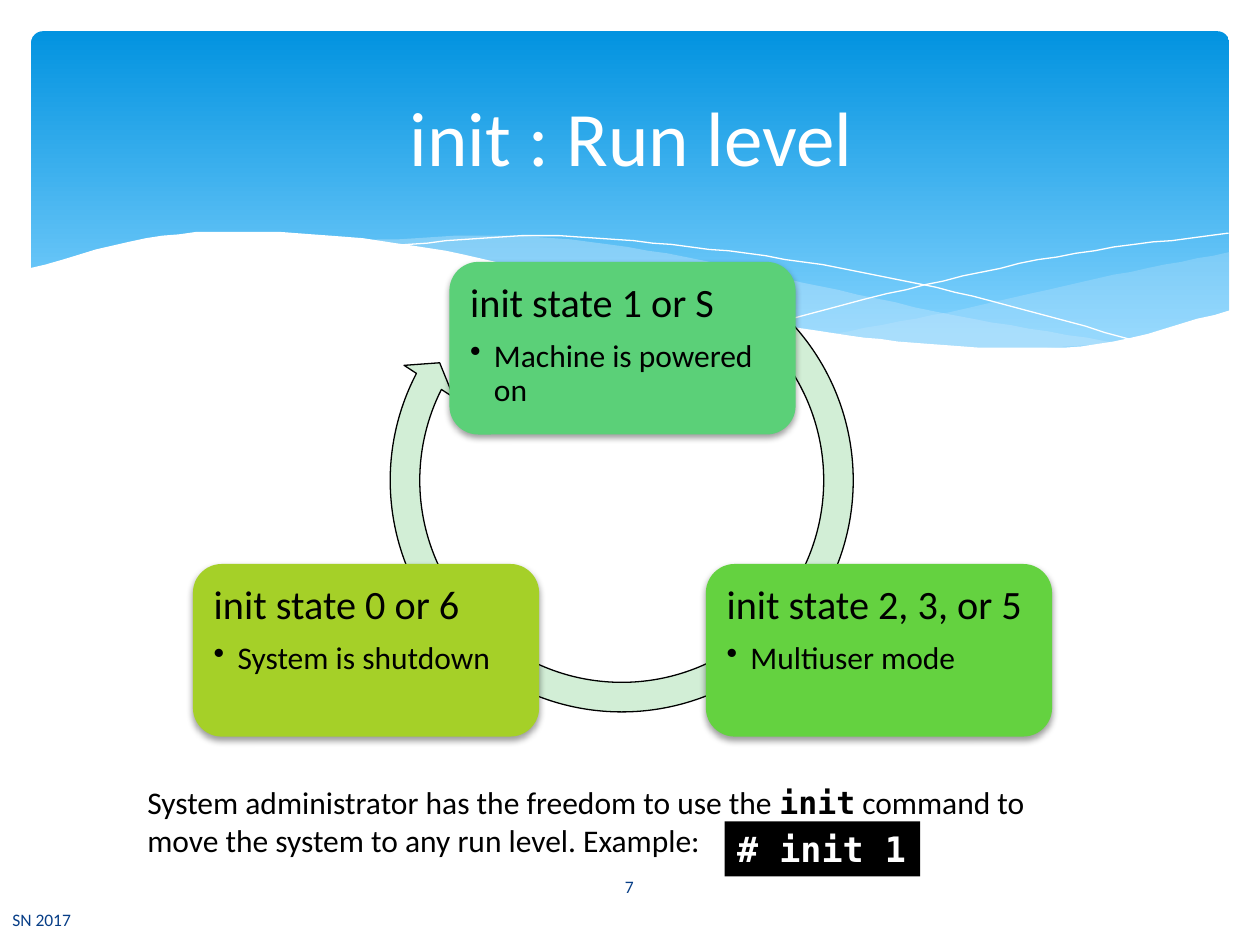
from dataclasses import dataclass
from typing import Any

from lxml.etree import SubElement
from pptx import Presentation
from pptx.dml.color import RGBColor
from pptx.enum.shapes import MSO_SHAPE
from pptx.enum.text import MSO_ANCHOR, MSO_AUTO_SIZE, PP_ALIGN
from pptx.oxml.ns import qn
from pptx.util import Cm, Pt

SANS, MONO = "Calibri", "DejaVu Sans Mono"
BLACK, WHITE, NAVY, PALE_BLUE = "000000", "FFFFFF", "073E87", "C6E7FC"
CURVE_UNIT = Cm(0.0254)
CURVE_STEPS = 8
WAVE_FLOOR = 329
BOX_WIDTH, BOX_HEIGHT = 6.98, 3.48
CYCLE_CENTER, CYCLE_SPREAD = 12.55, 5.17
UPPER_ROW, LOWER_ROW = 5.28, 11.37

Point = tuple[float, float]


@dataclass
class Span:
    text: str
    size: float
    color: str = BLACK
    font: str = SANS
    bold: bool = False


@dataclass
class State:
    heading: str
    detail: str
    column: int
    top: float
    color: str


@dataclass
class Edge:
    """A smooth curve through heights spaced evenly from start to end."""
    start: float
    end: float
    heights: list[float]

    def points(self) -> list[Point]:
        heights = self.heights
        before = 2 * heights[0] - heights[1]
        after = 2 * heights[-1] - heights[-2]
        padded = [before, *heights, after]
        count = len(heights) - 1
        width = (self.end - self.start) / count
        result: list[Point] = [(self.start, heights[0])]
        for index in range(count):
            a, b, c, d = padded[index:index + 4]
            for step in range(1, CURVE_STEPS + 1):
                t = step / CURVE_STEPS
                bend = (2 * a - 5 * b + 4 * c - d) * t + (3 * b - a - 3 * c + d) * t * t
                result.append((self.start + (index + t) * width,
                               b + t * (c - a + bend) / 2))
        return result


STATES = [
    State("init state 1 or S", "Machine is powered on", 0, UPPER_ROW, "5BD078"),
    State("init state 2, 3, or 5", "Multiuser mode", 1, LOWER_ROW, "64D240"),
    State("init state 0 or 6", "System is shutdown", -1, LOWER_ROW, "A5D028"),
]
RIGHT_WAVE = [Edge(976, 661, [200, 221, 245, 265]),
              Edge(661, 976, [265, 276, 274, 247])]
MIDDLE_WAVE = [Edge(893, 286, [273, 253, 227, 201, 187, 191]),
               Edge(286, 893, [191, 212, 240, 264, 277, 273])]
THIN_LINES = [Edge(309, 907, [195, 187, 196, 213, 239, 272]),
              Edge(613, 975, [257, 226, 201, 185])]
WHITE_WAVE = Edge(977, 23, [246, 273, 275, 264, 245, 220, 197, 185, 187, 213])


def rgb(color: str) -> RGBColor:
    return RGBColor.from_string(color)


def paint(shape: Any, color: str) -> None:
    """Fill a shape plainly, without outline or shadow."""
    shape.shadow.inherit = False
    shape.fill.solid()
    shape.fill.fore_color.rgb = rgb(color)
    shape.line.fill.background()


def write(para: Any, spans: list[Span], **layout: Any) -> None:
    for name, value in ({"alignment": PP_ALIGN.LEFT} | layout).items():
        setattr(para, name, value)
    for span in spans:
        run = para.add_run()
        run.text = span.text
        run.font.color.rgb = rgb(span.color)
        font_format = {"name": span.font, "size": Pt(span.size), "bold": span.bold}
        for name, value in font_format.items():
            setattr(run.font, name, value)


def add_text(page: Any, area: tuple[float, float, float, float], spans: list[Span],
             anchor: MSO_ANCHOR = MSO_ANCHOR.MIDDLE,
             alignment: PP_ALIGN = PP_ALIGN.LEFT) -> None:
    frame = page.shapes.add_textbox(*map(Cm, area)).text_frame
    frame.word_wrap = True
    frame.vertical_anchor = anchor
    write(frame.paragraphs[0], spans, alignment=alignment)


def add_banner(page: Any) -> None:
    banner = page.shapes.add_shape(MSO_SHAPE.ROUNDED_RECTANGLE,
                                   Cm(0.63), Cm(0.63), Cm(24.15), Cm(6.86))
    banner.adjustments[0] = 0.034
    banner.shadow.inherit = False
    banner.line.fill.background()
    banner.fill.gradient()
    banner.fill.gradient_angle = 270
    stops = [(0, "0293E0"), (0.9, "83D3FE")]
    for stop, (position, color) in zip(banner.fill.gradient_stops, stops):
        stop.position = position
        stop.color.rgb = rgb(color)


def add_curve(page: Any, points: list[Point], close: bool) -> Any:
    builder = page.shapes.build_freeform(*points[0], scale=CURVE_UNIT)
    builder.add_line_segments(points[1:], close=close)
    return builder.convert_to_shape()


def add_wave(page: Any, points: list[Point], color: str, opacity: int = 100) -> None:
    wave = add_curve(page, points, close=True)
    paint(wave, color)
    if opacity < 100:
        fill_color = wave._element.spPr.find(qn("a:solidFill"))[0]
        SubElement(fill_color, qn("a:alpha"), val=str(opacity * 1000))


def add_thin_line(page: Any, edge: Edge) -> None:
    line = add_curve(page, edge.points(), close=False)
    line.shadow.inherit = False
    line.fill.background()
    line.line.color.rgb = rgb(WHITE)
    line.line.width = Pt(0)


def add_waves(page: Any) -> None:
    for (top, bottom), opacity in ((RIGHT_WAVE, 29), (MIDDLE_WAVE, 40)):
        add_wave(page, top.points() + bottom.points(), PALE_BLUE, opacity)
    for edge in THIN_LINES:
        add_thin_line(page, edge)
    floor = [(WHITE_WAVE.end, WAVE_FLOOR), (WHITE_WAVE.start, WAVE_FLOOR)]
    add_wave(page, WHITE_WAVE.points() + floor, WHITE)


def add_cycle_arrow(page: Any) -> None:
    arrow = page.shapes.add_shape(MSO_SHAPE.CIRCULAR_ARROW,
                                  Cm(7.57), Cm(4.72), Cm(9.93), Cm(9.93))
    for index, value in enumerate([0.06, 3.41, 124.3, 182.64, 0.06]):
        arrow.adjustments[index] = value
    paint(arrow, "D2EED6")
    arrow.line.color.rgb = rgb(BLACK)
    arrow.line.width = Pt(0.75)


def add_soft_shadow(shape: Any) -> None:
    effects = shape._element.spPr.find(qn("a:effectLst"))
    shadow = SubElement(effects, qn("a:outerShdw"), blurRad=str(Pt(4)),
                        dist=str(Pt(2)), dir="5400000", rotWithShape="0")
    color = SubElement(shadow, qn("a:srgbClr"), val=BLACK)
    SubElement(color, qn("a:alpha"), val="38000")


def add_state(page: Any, state: State) -> None:
    left = CYCLE_CENTER + state.column * CYCLE_SPREAD - BOX_WIDTH / 2
    box = page.shapes.add_shape(MSO_SHAPE.ROUNDED_RECTANGLE, Cm(left), Cm(state.top),
                                Cm(BOX_WIDTH), Cm(BOX_HEIGHT))
    paint(box, state.color)
    add_soft_shadow(box)
    frame = box.text_frame
    frame.word_wrap = True
    frame.vertical_anchor = MSO_ANCHOR.TOP
    for side in ("left", "top", "right", "bottom"):
        setattr(frame, f"margin_{side}", Cm(0.25))
    write(frame.paragraphs[0], [Span(state.heading, 23)],
          line_spacing=0.9, space_after=Pt(8))
    detail = frame.add_paragraph()
    write(detail, [Span(state.detail, 18)],
          level=1, line_spacing=0.9, space_after=Pt(2.7))
    properties = detail._p.get_or_add_pPr()
    properties.set("marL", str(Cm(0.48)))
    properties.set("indent", str(-Cm(0.48)))
    SubElement(properties, qn("a:buChar"), char="•")


def add_command(page: Any) -> None:
    command = page.shapes.add_shape(MSO_SHAPE.RECTANGLE,
                                    Cm(14.61), Cm(16.56), Cm(3.94), Cm(1.11))
    paint(command, BLACK)
    frame = command.text_frame
    frame.word_wrap = False
    frame.auto_size = MSO_AUTO_SIZE.SHAPE_TO_FIT_TEXT
    frame.vertical_anchor = MSO_ANCHOR.TOP
    write(frame.paragraphs[0], [Span("# init 1", 20, WHITE, MONO, True)])


def main() -> None:
    deck = Presentation()
    deck.slide_width, deck.slide_height = Cm(25.4), Cm(19.05)
    page = deck.slides.add_slide(deck.slide_layouts[6])
    add_banner(page)
    add_waves(page)
    add_cycle_arrow(page)
    for state in STATES:
        add_state(page, state)
    add_text(page, (0, 18.03, 10.52, 1.02), [Span("SN 2017", 10, NAVY)])
    add_text(page, (11.07, 17.37, 3.23, 1.02), [Span("7", 10, NAVY)],
             alignment=PP_ALIGN.CENTER)
    add_text(page, (3.05, 1.07, 19.35, 3.35), [Span("init : Run level", 44, WHITE)],
             alignment=PP_ALIGN.CENTER)
    add_text(page, (2.72, 15.67, 19.25, 1.8), [
        Span("System administrator has the freedom to use the ", 18),
        Span("init", 18, font=MONO, bold=True),
        Span(" command to move the system to any run level. Example:", 18),
    ], anchor=MSO_ANCHOR.TOP)
    add_command(page)
    deck.save("out.pptx")


if __name__ == "__main__":
    main()
